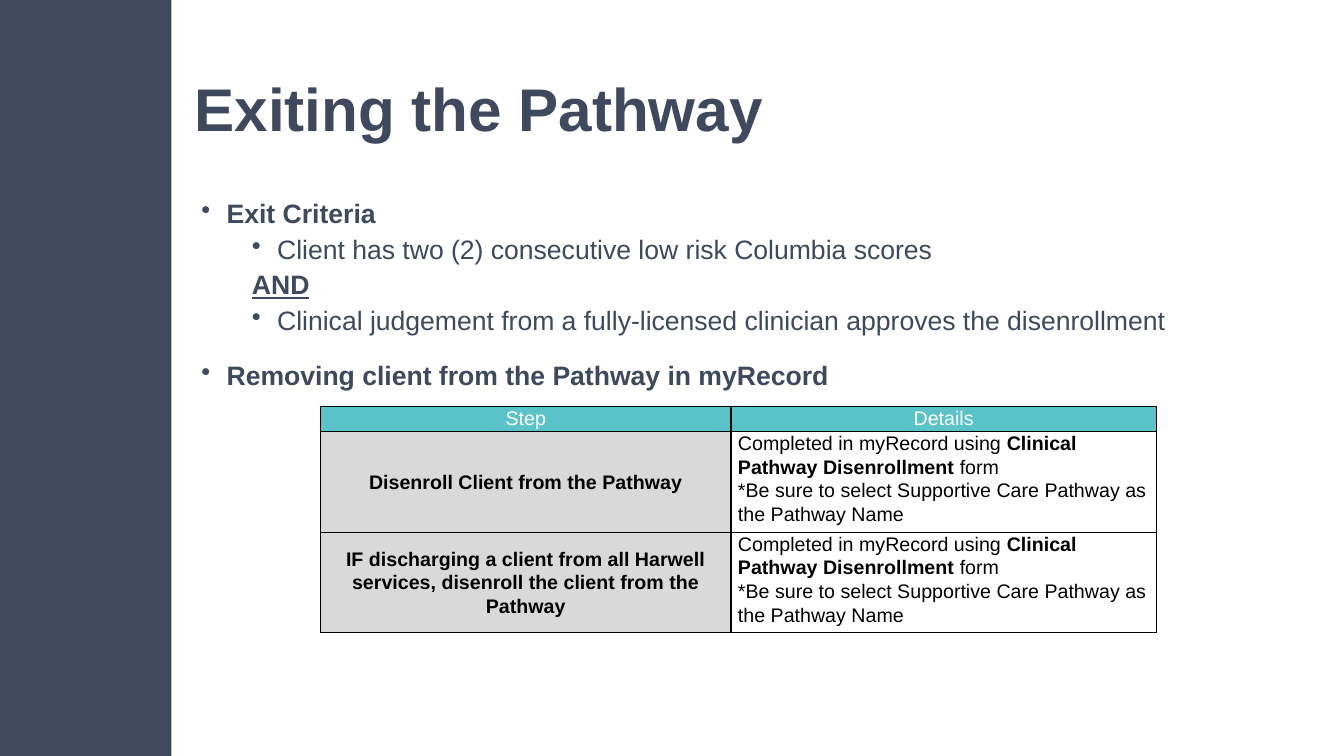
from dataclasses import dataclass

from lxml import etree
from pptx import Presentation
from pptx import util as u
from pptx.dml.color import RGBColor
from pptx.enum import shapes, text
from pptx.oxml import ns


@dataclass(frozen=True)
class Theme:
    font: str = "Arial"
    navy: str = "3E495E"
    teal: str = "5AC3CA"
    grey: str = "D9D9D9"
    white: str = "FFFFFF"
    black: str = "000000"
    title_size: int = 43
    body_size: int = 19
    table_size: int = 14


def add_span(para, words, *, size, color, font, bold=False, underline=False):
    """Add one formatted run of text to a paragraph."""
    span = para.add_run()
    span.text = words
    span.font.name = font
    span.font.size = u.Pt(size)
    span.font.bold = bold
    span.font.underline = underline
    span.font.color.rgb = RGBColor.from_string(color)


def set_indent(para, left, hanging=0, bullet=None):
    props = para._p.get_or_add_pPr()
    props.set("marL", str(u.Inches(left)))
    props.set("indent", str(-u.Inches(hanging)))
    if bullet:
        etree.SubElement(props, ns.qn("a:buChar")).set("char", bullet)
    else:
        etree.SubElement(props, ns.qn("a:buNone"))


def set_borders(cell, color):
    props = cell._tc.get_or_add_tcPr()
    for side in ("lnL", "lnR", "lnT", "lnB"):
        line = etree.SubElement(props, ns.qn(f"a:{side}"), w=str(u.Pt(1)))
        fill = etree.SubElement(line, ns.qn("a:solidFill"))
        etree.SubElement(fill, ns.qn("a:srgbClr"), val=color)


class SlideBuilder:
    def __init__(self, page, theme):
        self.page = page
        self.theme = theme

    def side_band(self, left, top, width, height):
        band = self.page.shapes.add_shape(
            shapes.MSO_SHAPE.RECTANGLE, *map(u.Inches, (left, top, width, height)))
        band.shadow.inherit = False
        band.fill.solid()
        band.fill.fore_color.rgb = RGBColor.from_string(self.theme.navy)
        band.line.fill.background()

    def text_box(self, left, top, width, height, anchor=text.MSO_ANCHOR.TOP):
        box = self.page.shapes.add_textbox(
            *map(u.Inches, (left, top, width, height)))
        frame = box.text_frame
        frame.word_wrap = True
        frame.vertical_anchor = anchor
        return frame

    def title(self, words, *place):
        para = self.text_box(*place, anchor=text.MSO_ANCHOR.MIDDLE).paragraphs[0]
        para.line_spacing = 0.9
        add_span(para, words, size=self.theme.title_size,
                 color=self.theme.navy, font=self.theme.font, bold=True)

    def outline(self, items, *place):
        frame = self.text_box(*place)
        for index, (words, indent, spacing, style) in enumerate(items):
            para = frame.add_paragraph() if index else frame.paragraphs[0]
            set_indent(para, **indent)
            para.line_spacing = spacing
            para.space_before = u.Pt(5 if index else 0)
            add_span(para, words, size=self.theme.body_size,
                     color=self.theme.navy, font=self.theme.font, **style)

    def cell(self, cell, lines, *, fill=None, color, align, anchor):
        set_borders(cell, self.theme.black)
        if fill:
            cell.fill.solid()
            cell.fill.fore_color.rgb = RGBColor.from_string(fill)
        else:
            cell.fill.background()
        cell.margin_left = cell.margin_right = u.Inches(0.07)
        cell.margin_top = cell.margin_bottom = 0
        cell.vertical_anchor = anchor
        for index, line in enumerate(lines):
            frame = cell.text_frame
            para = frame.add_paragraph() if index else frame.paragraphs[0]
            para.alignment = align
            para.line_spacing = 1.07
            for words, bold in line:
                add_span(para, words, size=self.theme.table_size, color=color,
                         font=self.theme.font, bold=bold)

    def step_table(self, headings, steps, left, top, widths, heights):
        theme = self.theme
        table = self.page.shapes.add_table(
            len(heights), len(widths), u.Inches(left), u.Inches(top),
            u.Inches(sum(widths)), u.Inches(sum(heights))).table
        table.first_row = table.horz_banding = False
        for column, width in zip(table.columns, widths):
            column.width = u.Inches(width)
        for row, height in zip(table.rows, heights):
            row.height = u.Inches(height)

        center, left_side = text.PP_ALIGN.CENTER, text.PP_ALIGN.LEFT
        top_side, middle = text.MSO_ANCHOR.TOP, text.MSO_ANCHOR.MIDDLE
        for column, heading in enumerate(headings):
            self.cell(table.cell(0, column), [[(heading, False)]], fill=theme.teal,
                      color=theme.white, align=center, anchor=top_side)
        for row, (step, details) in enumerate(steps, start=1):
            self.cell(table.cell(row, 0), [[(step, True)]], fill=theme.grey,
                      color=theme.black, align=center, anchor=middle)
            self.cell(table.cell(row, 1), details, color=theme.black,
                      align=left_side, anchor=top_side)


# Content
HEADING = dict(left=0.75, hanging=0.25, bullet="•")
POINT = dict(left=1.25, hanging=0.25, bullet="•")
PLAIN = dict(left=1)
BOLD = dict(bold=True)

OUTLINE = [
    ("Exit Criteria", HEADING, 0.9, BOLD),
    ("Client has two (2) consecutive low risk Columbia scores", POINT, 0.9, {}),
    ("AND", PLAIN, 0.9, dict(bold=True, underline=True)),
    ("Clinical judgement from a fully-licensed clinician approves the disenrollment",
     POINT, 0.9, {}),
    ("Removing client from the Pathway in myRecord", HEADING, 1.5, BOLD),
]
DETAILS = [
    [("Completed in myRecord using ", False),
     ("Clinical Pathway Disenrollment ", True), ("form", False)],
    [("*Be sure to select Supportive Care Pathway as the Pathway Name", False)],
]
STEPS = [
    ("Disenroll Client from the Pathway", DETAILS),
    ("IF discharging a client from all Harwell services, "
     "disenroll the client from the Pathway", DETAILS),
]


def main():
    deck = Presentation()
    deck.slide_width, deck.slide_height = u.Inches(13.33), u.Inches(7.5)
    builder = SlideBuilder(deck.slides.add_slide(deck.slide_layouts[6]), Theme())

    # Side band and title
    builder.side_band(0, 0, 1.7, 7.5)
    builder.title("Exiting the Pathway", 1.83, 0.39, 11.35, 1.45)

    # Exit criteria and removal steps
    builder.outline(OUTLINE, 1.4, 1.94, 11.55, 4.99)
    builder.step_table(("Step", "Details"), STEPS, 3.18, 4.03,
                       widths=(4.07, 4.22), heights=(0.23, 0.93, 0.93))

    deck.save("out.pptx")


if __name__ == "__main__":
    main()
